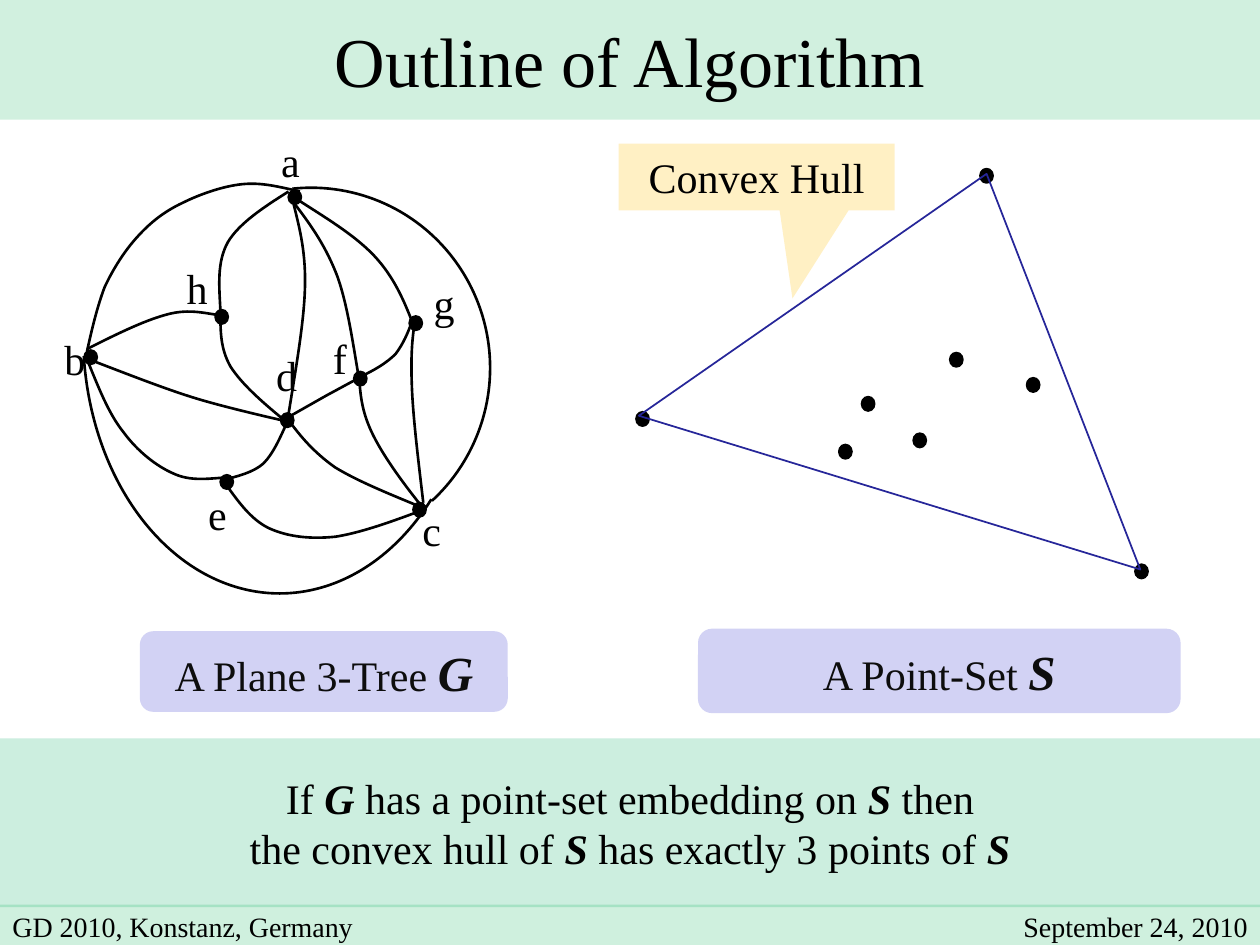
"""Build a slide on embedding a plane 3-tree on a point-set."""
from lxml.etree import SubElement
from pptx import Presentation
from pptx.dml.color import RGBColor
from pptx.enum.shapes import MSO_SHAPE
from pptx.enum.text import MSO_ANCHOR, PP_ALIGN
from pptx.oxml.ns import qn
from pptx.util import Inches, Pt

RECT, ROUND = MSO_SHAPE.RECTANGLE, MSO_SHAPE.ROUNDED_RECTANGLE
OVAL, ARC = MSO_SHAPE.OVAL, MSO_SHAPE.ARC
CALL = MSO_SHAPE.RECTANGULAR_CALLOUT
LEFT, MID, RIGHT = PP_ALIGN.LEFT, PP_ALIGN.CENTER, PP_ALIGN.RIGHT
CENTER = MSO_ANCHOR.MIDDLE
WIDE, HIGH = 10, 7.5
DOT = (0.1, 0.11)
TAG = (0.19, 0.19)
FACE, BLACK, GREEN = "Times New Roman", "000000", "00B050"

NODES = {
    "a": ((2.29, 1.51), (2.14, 1.18)),
    "b": ((0.67, 2.78), (0.42, 2.75)),
    "c": ((3.28, 3.99), (3.26, 4.11)),
    "d": ((2.23, 3.28), (2.1, 2.88)),
    "e": ((1.75, 3.77), (1.56, 3.98)),
    "f": ((2.81, 2.95), (2.55, 2.74)),
    "g": ((3.25, 2.51), (3.35, 2.31)),
    "h": ((1.71, 2.46), (1.39, 2.19)),
}
CURVES = {
    "bd": [(0.7, 2.85), (0.99, 2.96), (1.29, 3.08), (1.55, 3.16),
           (1.81, 3.24), (2.26, 3.34), (2.26, 3.34)],
    "ad": [(2.33, 1.62), (2.38, 1.82), (2.43, 2.01), (2.42, 2.3),
           (2.41, 2.59), (2.34, 2.97), (2.28, 3.35)],
    "dc": [(2.28, 3.32), (2.38, 3.46), (2.49, 3.59), (2.66, 3.71),
           (2.84, 3.82), (3.09, 3.92), (3.33, 4.02)],
    "ba": [(0.69, 2.79), (0.73, 2.61), (0.77, 2.44), (0.83, 2.28),
           (0.9, 2.13), (0.99, 1.99), (1.09, 1.88),
           (1.19, 1.77), (1.3, 1.68), (1.45, 1.61),
           (1.59, 1.54), (1.79, 1.47), (1.95, 1.46),
           (2.1, 1.45), (2.24, 1.49), (2.38, 1.52)],
    "ed": [(1.77, 3.81), (1.89, 3.78), (2.01, 3.75), (2.09, 3.68),
           (2.17, 3.6), (2.22, 3.48), (2.28, 3.35)],
    "be": [(0.69, 2.85), (0.78, 3.07), (0.86, 3.28), (0.98, 3.43),
           (1.09, 3.58), (1.24, 3.7), (1.38, 3.76),
           (1.51, 3.82), (1.65, 3.8), (1.79, 3.79)],
    "ec": [(1.79, 3.84), (1.89, 3.98), (1.99, 4.12), (2.13, 4.19),
           (2.28, 4.26), (2.46, 4.28), (2.66, 4.26),
           (2.86, 4.23), (3.11, 4.14), (3.35, 4.05)],
    "hd": [(1.75, 2.5), (1.75, 2.63), (1.75, 2.77), (1.83, 2.91),
           (1.92, 3.05), (2.08, 3.19), (2.25, 3.33)],
    "ha": [(1.75, 2.47), (1.74, 2.27), (1.72, 2.08), (1.81, 1.92),
           (1.9, 1.77), (2.1, 1.64), (2.29, 1.52)],
    "hb": [(1.73, 2.5), (1.6, 2.48), (1.48, 2.45), (1.31, 2.5),
           (1.13, 2.55), (0.91, 2.66), (0.69, 2.77)],
    "af": [(2.34, 1.62), (2.47, 1.79), (2.59, 1.96), (2.68, 2.2),
           (2.76, 2.43), (2.8, 2.72), (2.85, 3.01)],
    "fc": [(2.85, 2.99), (2.86, 3.13), (2.87, 3.26), (2.95, 3.43),
           (3.03, 3.6), (3.18, 3.81), (3.34, 4.01)],
    "ga": [(3.27, 2.55), (3.2, 2.37), (3.12, 2.19), (2.97, 2.03),
           (2.81, 1.86), (2.57, 1.72), (2.34, 1.57)],
    "fg": [(2.86, 2.99), (2.97, 2.94), (3.07, 2.88), (3.14, 2.81),
           (3.2, 2.73), (3.24, 2.64), (3.27, 2.55)],
    "gc": [(3.29, 2.57), (3.27, 2.71), (3.26, 2.84), (3.27, 3.08),
           (3.28, 3.32), (3.32, 3.65), (3.36, 3.99)],
}
CHORD = [(2.29, 3.31), (2.59, 3.14), (2.83, 3.01)]
ARCS = [((1.05, 1.49, 2.84, 2.86), (158.4, 28.65)),
        ((0.66, 0.6, 3.12, 4.11), (28.42, 104.21))]
POINTS = [(5.05, 3.27), (7.78, 1.34), (9.01, 4.48), (6.84, 3.15),
          (8.15, 3), (6.66, 3.53), (7.54, 2.8), (7.25, 3.44)]
HULL = [(5.07, 3.3), (7.83, 1.38), (9.05, 4.52)]
CLAIM = ["If *G *has a point-set embedding on *S *then",
         "the convex hull of *S* has exactly 3 points of *S*"]
PANELS = [
    (RECT, (0, 5.86, WIDE, 1.34), "CCEEDF", 100, CLAIM, {}),
    (CALL, (4.91, 1.14, 2.19, 0.53), "FFC000", 23, ["Convex Hull"], {}),
    (ROUND, (1.11, 5.01, 2.92, 0.64), "D2D2F4", 100,
     ["A Plane 3-Tree *G*"], {"ink": "0D0D0D", "big": 28}),
    (ROUND, (5.54, 4.99, 3.83, 0.67), "D2D2F4", 100,
     ["A Point-Set *S*"], {"ink": "0D0D0D", "big": 28}),
    (RECT, (0, 7.18, WIDE, 0.32), GREEN, 19, [], {}),
]
NOTES = [((0, 7.1, 3.11, 0.51), "GD 2010, Konstanz, Germany", LEFT),
         ((7.77, 7.1, 2.23, 0.51), "September 24, 2010", RIGHT)]


def color(code):
    return RGBColor.from_string(code)


def scale(box):
    return [Inches(n) for n in box]


def write(shape, lines, size=24, big=24, ink=BLACK, align=MID, wrap=True):
    """Fill a shape with lines in which stars enclose bold italic text."""
    frame = shape.text_frame
    frame.word_wrap, frame.vertical_anchor = wrap, CENTER
    for row, line in enumerate(lines):
        para = frame.add_paragraph() if row else frame.paragraphs[0]
        para.alignment = align
        for part, text in enumerate(line.split("*")):
            if not text:
                continue
            run, strong = para.add_run(), part % 2 == 1
            run.text = text
            form = {"name": FACE, "size": Pt(big if strong else size),
                    "bold": strong, "italic": strong}
            for key, value in form.items():
                setattr(run.font, key, value)
            run.font.color.rgb = color(ink)


def paint(shape, fill=None, alpha=100, line=None, width=1.5):
    """Set the fill, opacity and outline of a shape."""
    shape.shadow.inherit = False
    if fill:
        shape.fill.solid()
        shape.fill.fore_color.rgb = color(fill)
        if alpha < 100:
            tint = shape.element.xpath("./p:spPr/a:solidFill/a:srgbClr")[0]
            SubElement(tint, qn("a:alpha"), val=str(alpha * 1000))
    else:
        shape.fill.background()
    if line:
        shape.line.color.rgb = color(line)
        shape.line.width = Pt(width)
    else:
        shape.line.fill.background()


def trace(shapes, points, close=False, curve=False, **look):
    """Draw a polyline, or a chain of cubic curves, through points."""
    first, *rest = [scale(point) for point in points]
    pen = shapes.build_freeform(*first)
    pen.add_line_segments(rest, close=close)
    shape = pen.convert_to_shape()
    if curve:
        steps = shape.element.xpath(".//a:lnTo")
        for head, *tail in zip(steps[::3], steps[1::3], steps[2::3]):
            head.tag = qn("a:cubicBezTo")
            for step in tail:
                head.append(step[0])
                step.getparent().remove(step)
    paint(shape, **look)


def place(shapes, kind, box, adjust=(), **look):
    """Add a preset shape and paint it."""
    shape = shapes.add_shape(kind, *scale(box))
    for index, value in enumerate(adjust):
        shape.adjustments[index] = value
    paint(shape, **look)
    return shape


def main():
    deck = Presentation()
    deck.slide_width, deck.slide_height = Inches(WIDE), Inches(HIGH)
    shapes = deck.slides.add_slide(deck.slide_layouts[5]).shapes
    title = shapes.title
    title.left, title.top, title.width, title.height = scale((0, 0, WIDE, 0.95))
    paint(title, GREEN, 18)
    write(title, ["Outline of Algorithm"], 40, wrap=False)

    for points in CURVES.values():
        trace(shapes, points, curve=True, line=BLACK)
    trace(shapes, CHORD, line=BLACK)
    for box, angles in ARCS:
        place(shapes, ARC, box, angles, line=BLACK)
    for spot in [dot for dot, _ in NODES.values()] + POINTS:
        place(shapes, OVAL, spot + DOT, fill=BLACK, line=BLACK, width=1.25)
    trace(shapes, HULL, close=True, line="262699", width=1)
    for name, (_, spot) in NODES.items():
        write(shapes.add_textbox(*scale(spot + TAG)), [name])

    for kind, box, fill, alpha, lines, form in PANELS:
        tip = (0.13, 1.82) if kind == CALL else ()
        panel = place(shapes, kind, box, tip, fill=fill, alpha=alpha)
        write(panel, lines, wrap=lines is not CLAIM, **form)
    for box, text, align in NOTES:
        write(shapes.add_textbox(*scale(box)), [text], 16, align=align)
    deck.save("out.pptx")


if __name__ == "__main__":
    main()
